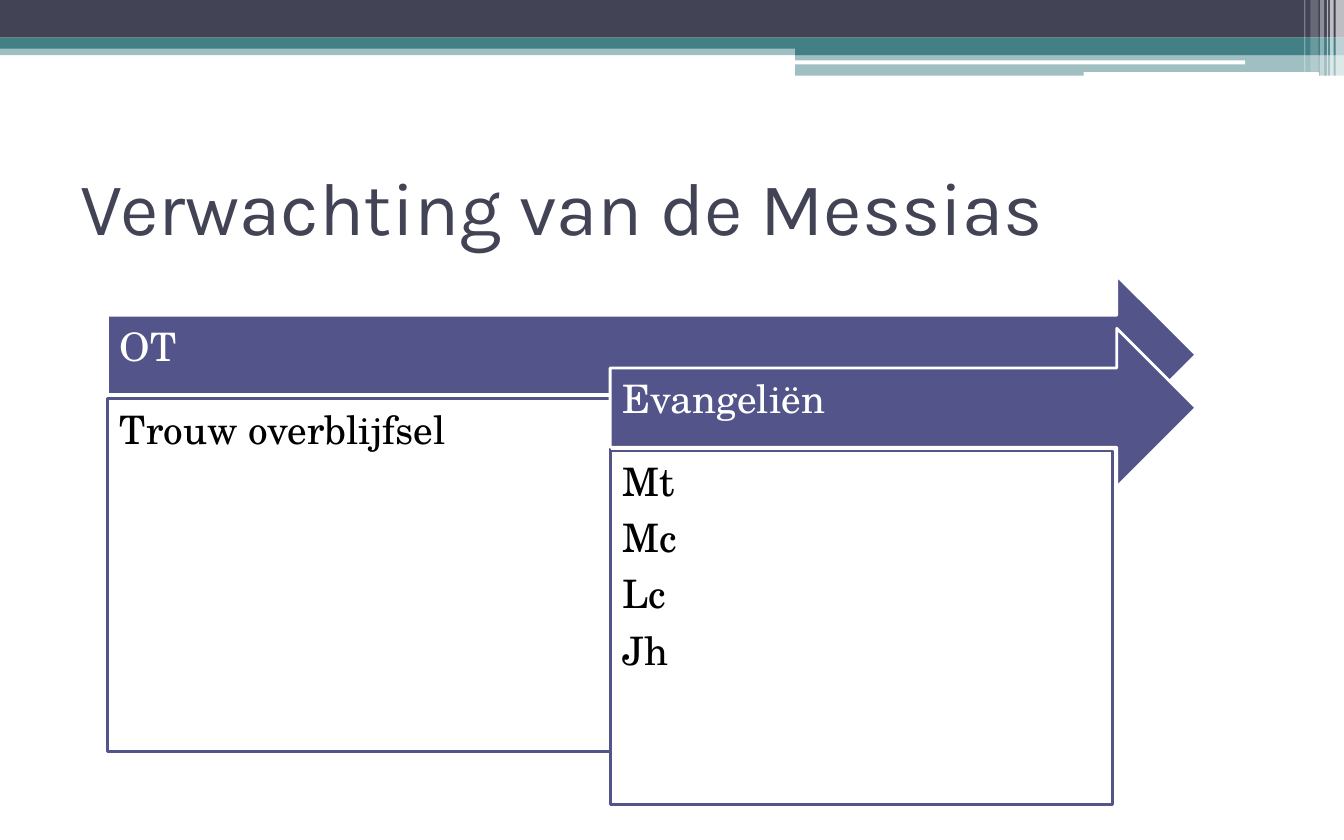
from pptx import Presentation
from pptx.dml.color import RGBColor
from pptx.enum import shapes, text
from pptx.oxml.ns import qn
from pptx import util as u
from lxml import etree

COLORS = {
    "white": "FFFFFF",
    "black": "000000",
    "teal": "438086",
    "slate": "424456",
    "violet": "53548A",
}
RECT = shapes.MSO_SHAPE.RECTANGLE
ROUNDED = shapes.MSO_SHAPE.ROUNDED_RECTANGLE
ARROW = shapes.MSO_SHAPE.RIGHT_ARROW


class Painter:
    """Holds the style and the current slide; all lengths are in points."""

    title_font, body_font = "Karla", "TeX Gyre Schola"
    title_size, body_size = 40, 21
    line_width = 1.5

    def __init__(self, page):
        self.page = page

    def color(self, name):
        return RGBColor.from_string(COLORS[name])

    def shape(self, kind, area, fill, opacity=100, line=None):
        shape = self.page.shapes.add_shape(kind, *map(u.Pt, area))
        shape.shadow.inherit = False
        shape.fill.solid()
        shape.fill.fore_color.rgb = self.color(fill)
        if opacity < 100:
            color = shape._element.spPr.find(qn("a:solidFill"))[0]
            etree.SubElement(color, qn("a:alpha"), val=str(opacity * 1000))
        if line:
            shape.line.color.rgb = self.color(line)
            shape.line.width = u.Pt(self.line_width)
        else:
            shape.line.fill.background()
        return shape

    def add_span(self, para, words, font, size, color):
        span = para.add_run()
        span.text = words
        span.font.name = font
        span.font.size = u.Pt(size)
        span.font.color.rgb = self.color(color)

    def title(self, words, area):
        box = self.page.shapes.title
        box.left, box.top, box.width, box.height = map(u.Pt, area)
        frame = box.text_frame
        frame.word_wrap = True
        frame.vertical_anchor = text.MSO_ANCHOR.MIDDLE
        para = frame.paragraphs[0]
        para.alignment = text.PP_ALIGN.LEFT
        self.add_span(para, words, self.title_font, self.title_size, "slate")

    def lines(self, shape, entries, color, anchor, right=6.5, bottom=6.5):
        frame = shape.text_frame
        frame.word_wrap = True
        frame.vertical_anchor = anchor
        frame.margin_left = frame.margin_top = u.Pt(6.5)
        frame.margin_right, frame.margin_bottom = u.Pt(right), u.Pt(bottom)
        for index, entry in enumerate(entries):
            para = frame.add_paragraph() if index else frame.paragraphs[0]
            para.alignment = text.PP_ALIGN.LEFT
            para.line_spacing = 0.9
            para.space_after = u.Pt(0.35 * self.body_size)
            self.add_span(para, entry, self.body_font, self.body_size, color)

    def stage(self, heading, entries, left, top, arrow_width):
        """Draw a headed arrow with its content panel below."""
        arrow = self.shape(ARROW, (left, top, arrow_width, 85), "violet", line="white")
        self.lines(arrow, [heading], "white", text.MSO_ANCHOR.MIDDLE, 20, 13.5)
        panel = self.shape(RECT, (left, top + 65.7, 269.3, 189.4), "white", line="violet")
        self.lines(panel, entries, "black", text.MSO_ANCHOR.TOP)


def draw_header(painter):
    bands = [
        ((0, 23.8, 720, 5.8), "teal", 50),
        ((0, 0, 720, 20.2), "slate", 100),
        ((0, 20.2, 720, 5.8), "teal", 100),
        ((426, 23.8, 294, 5.8), "teal", 100),
        ((426, 28.8, 294, 11.8), "teal", 50),
    ]
    for area, fill, opacity in bands:
        painter.shape(RECT, area, fill, opacity)

    for left, top, width in [(425.5, 32.4, 241.5), (580.5, 38.7, 126)]:
        painter.shape(ROUNDED, (left, top, width, 2.1), "white")

    stripes = [
        (715.5, 4.5, 41, 65),
        (712.4, 2.1, 41, 65),
        (710.8, 0.7, 41, 60),
        (707.3, 2.1, 41, 40),
        (702, 4.3, 38.4, 20),
        (698.6, 0.7, 38.4, 30),
    ]
    for left, width, height, opacity in stripes:
        painter.shape(RECT, (left, 0, width, height), "white", opacity)


def main():
    deck = Presentation()
    deck.slide_width, deck.slide_height = u.Pt(720), u.Pt(450)
    painter = Painter(deck.slides.add_slide(deck.slide_layouts[5]))
    draw_header(painter)
    painter.title("Verwachting van de Messias", (36, 75, 648, 70))

    left, right, top = 57.6, 640.8, 147.6
    step_across, step_down = 269.3, 28.3
    stages = [
        ("OT", ["Trouw overblijfsel"]),
        ("Evangeliën", ["Mt", "Mc", "Lc", "Jh"]),
    ]
    for index, (heading, entries) in enumerate(stages):
        start = left + index * step_across
        painter.stage(heading, entries, start, top + index * step_down, right - start)
    deck.save("out.pptx")


if __name__ == "__main__":
    main()
